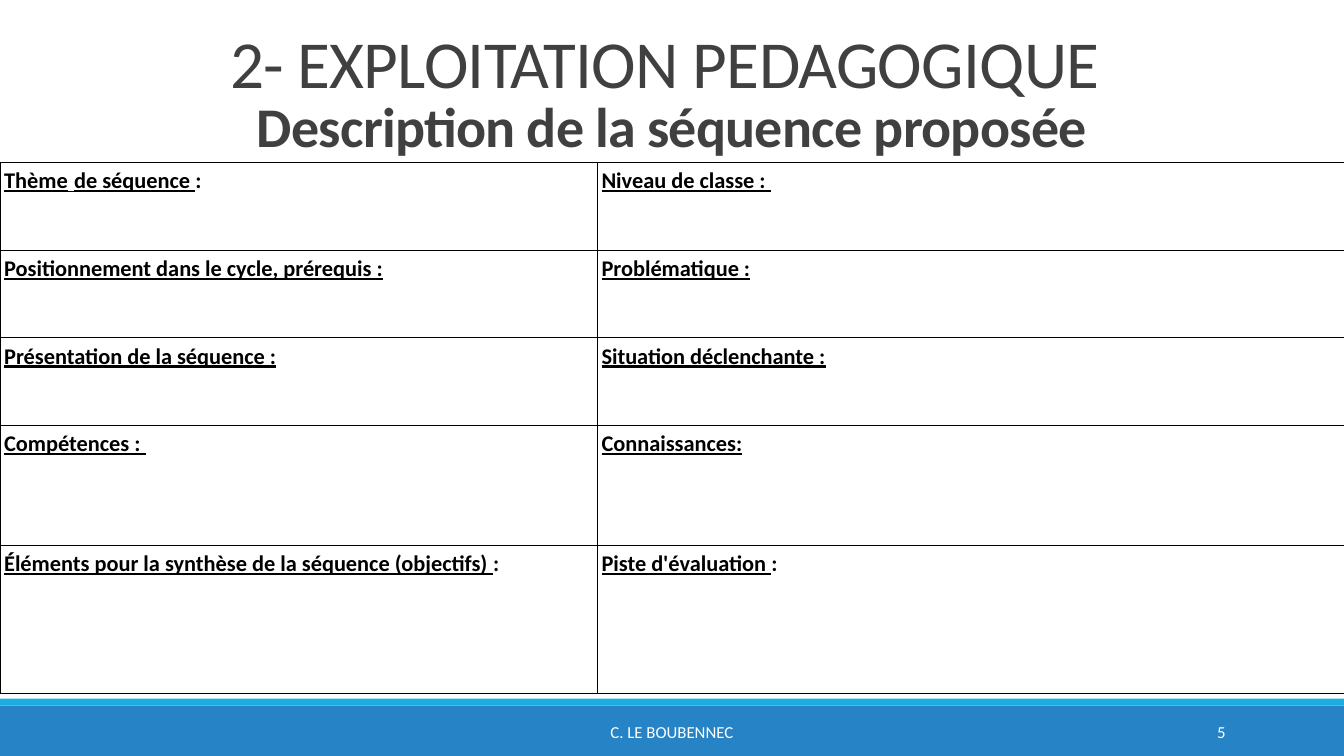
from lxml import etree
from pptx import Presentation
from pptx.dml.color import RGBColor
from pptx.enum import shapes, text
from pptx.oxml import ns
from pptx.util import Pt

ROWS = [
    (62.6, ("Thème", " ", "de séquence ", ":"), ("Niveau de classe : ",)),
    (62.6, ("Positionnement dans le cycle, prérequis :",), ("Problématique :",)),
    (62.6, ("Présentation de la séquence :",), ("Situation déclenchante :",)),
    (85.7, ("Compétences : ",), ("Connaissances:",)),
    (105.8, ("Éléments pour la synthèse de la séquence (objectifs) ", ":"),
     ("Piste d'évaluation ", ":")),
]


def tint(code):
    """Return the colour for a hex string."""
    return RGBColor.from_string(code)


def style(par, size, code, align, bold=False):
    """Set the font and alignment of a paragraph."""
    par.alignment = align
    par.font.name = "Calibri"
    par.font.size = Pt(size)
    par.font.bold = bold
    par.font.color.rgb = tint(code)


def title(slide, x, y, w, h):
    """Fill the title placeholder with a heading and a bold second line."""
    head = slide.shapes.title
    head.left, head.top, head.width, head.height = Pt(x), Pt(y), Pt(w), Pt(h)
    frame = head.text_frame
    frame.auto_size = text.MSO_AUTO_SIZE.NONE
    frame.vertical_anchor = text.MSO_ANCHOR.BOTTOM
    par = frame.paragraphs[0]
    style(par, 48, "404040", text.PP_ALIGN.CENTER)
    par.line_spacing = 0.85
    top = par.add_run()
    top.text = "2- EXPLOITATION PEDAGOGIQUE "
    par.add_line_break()
    sub = par.add_run()
    sub.text = "Description de la séquence proposée"
    sub.font.size, sub.font.bold = Pt(40), True
    for run in par.runs:
        run.font._element.set("spc", "-50")


def border(cell):
    """Draw a thin black line on each side of a cell."""
    props = cell._tc.get_or_add_tcPr()
    for spot, side in enumerate(("lnL", "lnR", "lnT", "lnB")):
        line = etree.Element(ns.qn("a:" + side), w=str(Pt(0.57)))
        fill = etree.SubElement(line, ns.qn("a:solidFill"))
        etree.SubElement(fill, ns.qn("a:srgbClr"), val="000000")
        props.insert(spot, line)


def entry(cell, parts):
    """Write an underlined label, leaving a lone colon plain."""
    cell.fill.solid()
    cell.fill.fore_color.rgb = tint("FFFFFF")
    border(cell)
    cell.margin_left = cell.margin_right = Pt(3)
    cell.margin_top = cell.margin_bottom = Pt(3.6)
    par = cell.text_frame.paragraphs[0]
    style(par, 16, "000000", text.PP_ALIGN.LEFT, True)
    for part in parts:
        run = par.add_run()
        run.text = part
        run.font.underline = part != ":"
        if part == " ":
            run.font.name = "Arial"


def grid(slide, x, y, w, split):
    """Place the two-column table of sequence headings."""
    high = sum(row[0] for row in ROWS)
    table = slide.shapes.add_table(
        len(ROWS), 2, Pt(x), Pt(y), Pt(w), Pt(high)).table
    table.first_row = table.horz_banding = False
    table.columns[0].width = Pt(split)
    table.columns[1].width = Pt(w - split)
    for r, (tall, *cells) in enumerate(ROWS):
        table.rows[r].height = Pt(tall)
        for c, parts in enumerate(cells):
            entry(table.cell(r, c), parts)


def bar(slide, x, y, w, h, code):
    """Draw a plain coloured band."""
    band = slide.shapes.add_shape(
        shapes.MSO_SHAPE.RECTANGLE, Pt(x), Pt(y), Pt(w), Pt(h))
    band.shadow.inherit = False
    band.fill.solid()
    band.fill.fore_color.rgb = tint(code)
    band.line.fill.background()


def note(slide, x, y, w, h, words, align):
    """Write one small white line in the footer."""
    frame = slide.shapes.add_textbox(Pt(x), Pt(y), Pt(w), Pt(h)).text_frame
    frame.word_wrap = True
    frame.vertical_anchor = text.MSO_ANCHOR.MIDDLE
    par = frame.paragraphs[0]
    par.text = words
    style(par, 12, "FFFFFF", align)


def footer(slide, x, y, w, h):
    """Place the bands, the author and the slide number."""
    bar(slide, x, y + 5, w, h - 5, "2683C6")
    bar(slide, x, y, w, 5, "1CADE4")
    note(slide, x + 290, y + 9.3, 380, 28.8, "C. LE BOUBENNEC",
         text.PP_ALIGN.CENTER)
    note(slide, x + 780, y + 9.3, 102.6, 28.8, "5", text.PP_ALIGN.RIGHT)


def main():
    """Build the slide and save it."""
    deck = Presentation()
    deck.slide_width, deck.slide_height = Pt(960), Pt(540)
    slide = deck.slides.add_slide(deck.slide_layouts[5])
    footer(slide, 0, 499, 960, 41)
    title(slide, 84, 8, 792, 109.4)
    grid(slide, 0, 116, 960, 426.7)
    deck.save("out.pptx")


if __name__ == "__main__":
    main()
